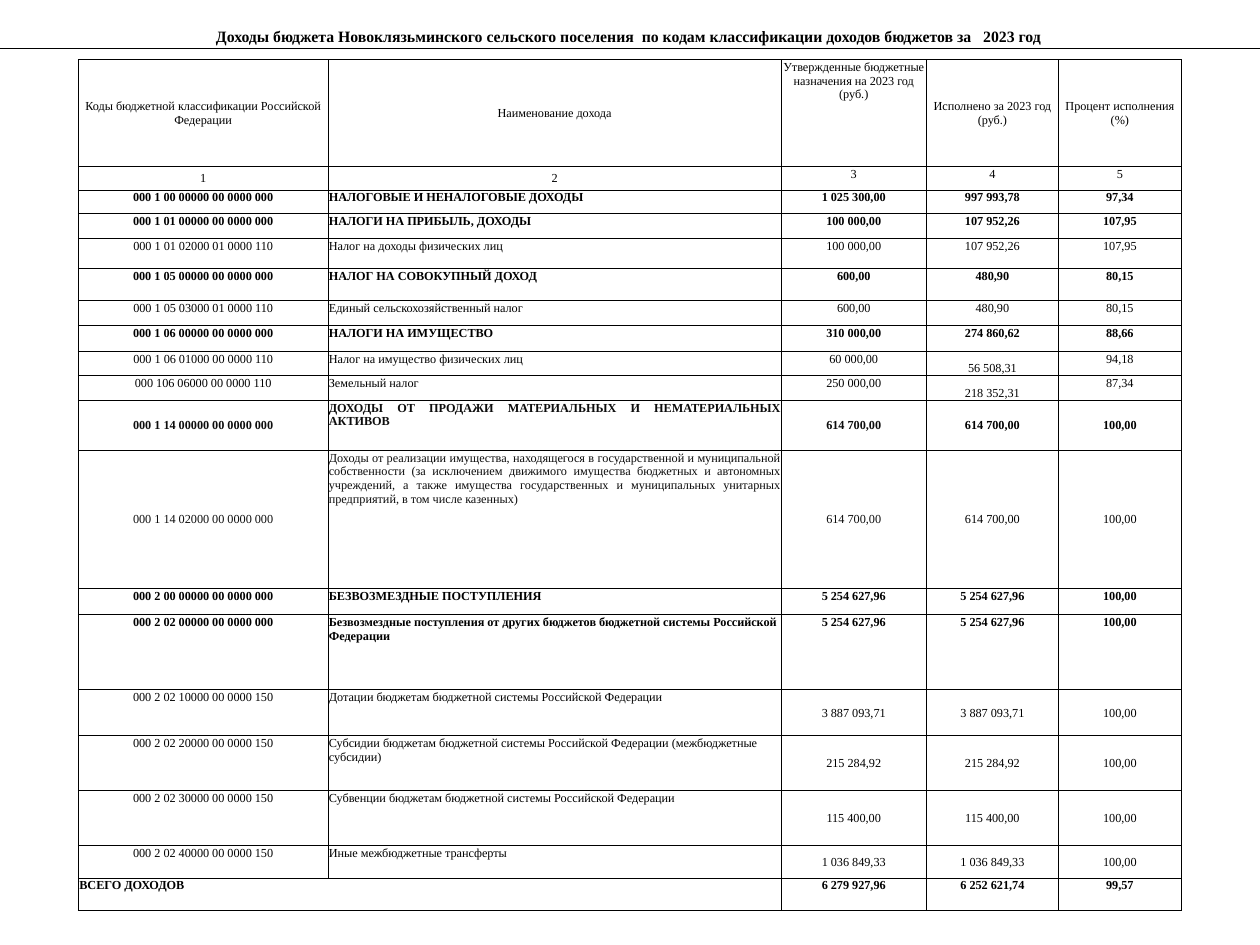
from dataclasses import dataclass

from pptx import Presentation
from pptx.dml.color import RGBColor
from pptx.enum.text import MSO_ANCHOR, PP_ALIGN
from pptx.oxml import parse_xml
from pptx.util import Cm, Pt

LEFT, CENTER, JUSTIFY = PP_ALIGN.LEFT, PP_ALIGN.CENTER, PP_ALIGN.JUSTIFY
ANCHORS = {"t": MSO_ANCHOR.TOP, "m": MSO_ANCHOR.MIDDLE, "b": MSO_ANCHOR.BOTTOM}
FONT = "Times New Roman"
BLACK, DARK, WHITE = "000000", "0D0D0D", "FFFFFF"
LINE = 0.5
SIDES = ("lnL", "lnR", "lnT", "lnB")
DRAWING = "http://schemas.openxmlformats.org/drawingml/2006/main"
WIDTHS = [5.03, 9.14, 2.92, 2.67, 2.47]
TITLE = ("Доходы бюджета Новоклязьминского сельского поселения  по кодам "
         "классификации доходов бюджетов за   2023 год ")


@dataclass
class Row:
    """One table row; anchors holds a letter per column: top, middle or bottom."""
    height: float
    code: str
    name: str
    plan: str
    fact: str
    share: str
    bold: bool = False
    anchors: str = "ttttt"
    align: PP_ALIGN = LEFT
    shaded: bool = False


ROWS = [
    Row(2.16, "Коды бюджетной классификации Российской Федерации", "Наименование дохода",
        "Утвержденные бюджетные назначения на 2023 год (руб.)",
        "Исполнено за 2023 год (руб.)", "Процент исполнения (%)",
        anchors="mmtmm", align=CENTER),
    Row(0.47, "1", "2", "3", "4", "5", anchors="mmttt", align=CENTER),
    Row(0.48, "000 1 00 00000 00 0000 000", "НАЛОГОВЫЕ И НЕНАЛОГОВЫЕ ДОХОДЫ",
        "1 025 300,00", "997 993,78", "97,34", bold=True),
    Row(0.5, "000 1 01 00000 00 0000 000", "НАЛОГИ НА ПРИБЫЛЬ, ДОХОДЫ",
        "100 000,00", "107 952,26", "107,95", bold=True),
    Row(0.61, "000 1 01 02000 01 0000 110", "Налог на доходы физических лиц",
        "100 000,00", "107 952,26", "107,95"),
    Row(0.64, "000 1 05 00000 00 0000 000", "НАЛОГ НА СОВОКУПНЫЙ ДОХОД",
        "600,00", "480,90", "80,15", bold=True),
    Row(0.5, "000 1 05 03000 01 0000 110", "Единый сельскохозяйственный налог",
        "600,00", "480,90", "80,15", align=JUSTIFY),
    Row(0.53, "000 1 06 00000 00 0000 000", "НАЛОГИ НА ИМУЩЕСТВО",
        "310 000,00", "274 860,62", "88,66", bold=True),
    Row(0.48, "000 1 06 01000 00 0000 110", "Налог на имущество физических лиц",
        "60 000,00", "56 508,31", "94,18", anchors="tttbt"),
    Row(0.5, "000 106 06000 00 0000 110", "Земельный налог",
        "250 000,00", "218 352,31", "87,34", anchors="tttbt"),
    Row(1.01, "000 1 14 00000 00 0000 000",
        "ДОХОДЫ ОТ ПРОДАЖИ МАТЕРИАЛЬНЫХ И НЕМАТЕРИАЛЬНЫХ АКТИВОВ",
        "614 700,00", "614 700,00", "100,00",
        bold=True, anchors="mtmmm", align=JUSTIFY, shaded=True),
    Row(2.78, "000 1 14 02000 00 0000 000",
        "Доходы от реализации имущества, находящегося в государственной и "
        "муниципальной собственности (за исключением движимого имущества бюджетных и "
        "автономных учреждений, а также имущества государственных и муниципальных "
        "унитарных предприятий, в том числе казенных)",
        "614 700,00", "614 700,00", "100,00",
        anchors="mtmmm", align=JUSTIFY, shaded=True),
    Row(0.53, "000 2 00 00000 00 0000 000", "БЕЗВОЗМЕЗДНЫЕ ПОСТУПЛЕНИЯ",
        "5 254 627,96", "5 254 627,96", "100,00", bold=True),
    Row(1.51, "000 2 02 00000 00 0000 000",
        "Безвозмездные поступления от других бюджетов бюджетной системы "
        "Российской Федерации",
        "5 254 627,96", "5 254 627,96", "100,00", bold=True),
    Row(0.93, "000 2 02 10000 00 0000 150",
        "Дотации бюджетам бюджетной системы Российской Федерации",
        "3 887 093,71", "3 887 093,71", "100,00", anchors="ttmmm"),
    Row(1.1, "000 2 02 20000 00 0000 150",
        "Субсидии бюджетам бюджетной системы Российской Федерации "
        "(межбюджетные субсидии)",
        "215 284,92", "215 284,92", "100,00", anchors="ttmmm"),
    Row(1.11, "000 2 02 30000 00 0000 150",
        "Субвенции бюджетам бюджетной системы Российской Федерации",
        "115 400,00", "115 400,00", "100,00", anchors="ttmmm", align=JUSTIFY),
    Row(0.66, "000 2 02 40000 00 0000 150", "Иные межбюджетные трансферты",
        "1 036 849,33", "1 036 849,33", "100,00", anchors="ttmmm"),
    Row(0.65, "ВСЕГО ДОХОДОВ", "", "6 279 927,96", "6 252 621,74", "99,57", bold=True),
]


def paint(color, value: str) -> None:
    color.rgb = RGBColor.from_string(value)


def write(cell, text: str, size: float, bold: bool, align: PP_ALIGN,
          color: str = BLACK) -> None:
    para = cell.text_frame.paragraphs[0]
    para.alignment = align
    run = para.add_run()
    run.text = text
    font = run.font
    font.name, font.size, font.bold = FONT, Pt(size), bold
    paint(font.color, color)


def frame(cell, drawn: tuple[str, ...] = SIDES) -> None:
    """Give the drawn sides of a cell a thin border and clear the others."""
    props = cell._tc.get_or_add_tcPr()
    for side in SIDES:
        ink = "<a:noFill/>"
        if side in drawn:
            ink = f'<a:solidFill><a:srgbClr val="{BLACK}"/></a:solidFill>'
        props.append(parse_xml(
            f'<a:{side} xmlns:a="{DRAWING}" w="{Pt(LINE)}">{ink}</a:{side}>'))


def inset(cell, gap: float) -> None:
    cell.margin_left = cell.margin_right = cell.margin_top = Cm(gap)
    cell.margin_bottom = 0


def add_grid(slide, left: float, top: float, widths: list[float],
             heights: list[float]):
    """Add a table without banding, sized by its columns and rows in cm."""
    table = slide.shapes.add_table(len(heights), len(widths), Cm(left), Cm(top),
                                   Cm(sum(widths)), Cm(sum(heights))).table
    table.first_row = table.horz_banding = False
    for column, width in zip(table.columns, widths):
        column.width = Cm(width)
    for line, height in zip(table.rows, heights):
        line.height = Cm(height)
    return table


def draw_title(slide) -> None:
    cell = add_grid(slide, 0, 0.58, [25.4], [0.39]).cell(0, 0)
    inset(cell, 0)
    frame(cell, ("lnB",))
    cell.fill.background()
    write(cell, TITLE, 9, True, CENTER)


def fill_row(table, index: int, row: Row) -> None:
    texts = [row.code, row.name, row.plan, row.fact, row.share]
    for col, text in enumerate(texts):
        cell = table.cell(index, col)
        inset(cell, 0.02)
        cell.vertical_anchor = ANCHORS[row.anchors[col]]
        frame(cell)
        shaded = row.shaded and col < 3
        if shaded:
            cell.fill.solid()
            paint(cell.fill.fore_color, WHITE)
        else:
            cell.fill.background()
        if text:
            total = col == 0 and not row.name
            align = row.align if col == 1 or total else CENTER
            write(cell, text, 7, row.bold, align, DARK if shaded else BLACK)
    if not row.name:
        table.cell(index, 0).merge(table.cell(index, 1))


def draw_income(slide) -> None:
    table = add_grid(slide, 1.58, 1.2, WIDTHS, [row.height for row in ROWS])
    for index, row in enumerate(ROWS):
        fill_row(table, index, row)


def main() -> None:
    deck = Presentation()
    deck.slide_width, deck.slide_height = Cm(25.4), Cm(19.05)
    slide = deck.slides.add_slide(deck.slide_layouts[6])
    draw_title(slide)
    draw_income(slide)
    deck.save("out.pptx")


if __name__ == "__main__":
    main()
